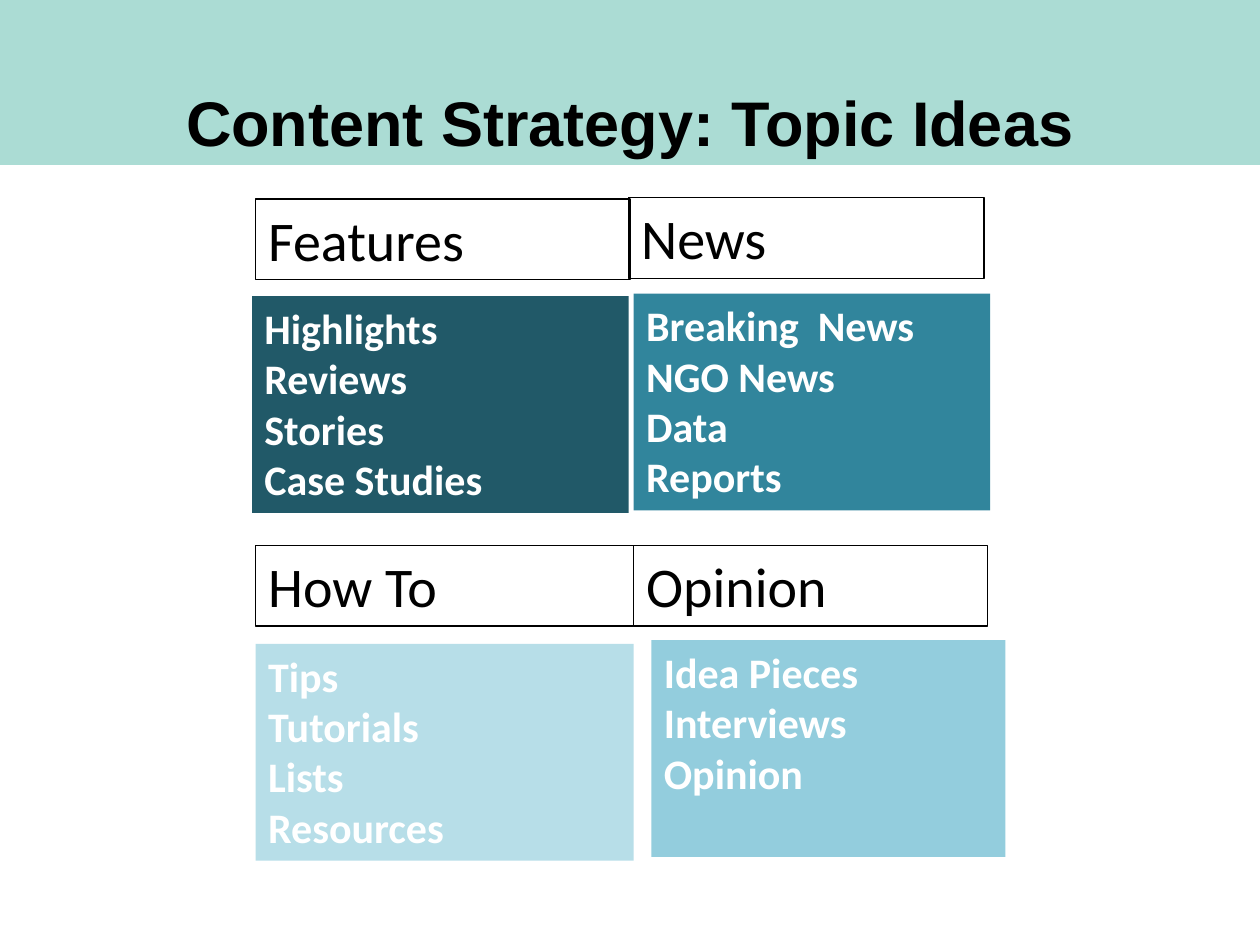
import pptx
import pptx.util
import pptx.dml.color
import pptx.enum.text
import pptx.enum.shapes

Inches = pptx.util.Inches
Pt = pptx.util.Pt

HEADING_HEIGHT = 0.64
LIST_HEIGHT = 1.72

# heading, heading (left, top, width), list (left, top, width), fill, items
TOPICS = [
    ("Features", (2.03, 1.58, 2.97), (2, 2.35, 2.99), "215968",
     ["Highlights\nReviews", "Stories", "Case Studies"]),
    ("News", (4.99, 1.57, 2.82), (5.03, 2.33, 2.83), "31859C",
     ["Breaking  News", "NGO News", "Data", "Reports"]),
    ("How To", (2.03, 4.33, 3), (2.03, 5.11, 3), "B7DEE8",
     ["Tips", "Tutorials", "Lists", "Resources"]),
    ("Opinion", (5.03, 4.33, 2.81), (5.17, 5.08, 2.81), "93CDDD",
     ["Idea Pieces", "Interviews", "Opinion"]),
]


def color(value):
    return pptx.dml.color.RGBColor.from_string(value)


def paint(shape, fill):
    shape.fill.solid()
    shape.fill.fore_color.rgb = color(fill)


def add_span(para, text, size, font, ink, bold):
    span = para.add_run()
    span.text = text
    span.font.size = Pt(size)
    span.font.name = font
    span.font.bold = bold
    span.font.color.rgb = color(ink)


def write_lines(shape, items, size, ink, bold):
    """Write one left-aligned paragraph per item; a newline is a line break."""
    frame = shape.text_frame
    frame.word_wrap = True
    frame.vertical_anchor = pptx.enum.text.MSO_ANCHOR.TOP
    for index, item in enumerate(items):
        para = frame.add_paragraph() if index else frame.paragraphs[0]
        para.alignment = pptx.enum.text.PP_ALIGN.LEFT
        for position, line in enumerate(item.split("\n")):
            if position:
                para.add_line_break()
            add_span(para, line, size, "Calibri", ink, bold)


def add_title(page, text, left, top, width, height):
    """Fill the title placeholder as a band with text at its foot."""
    title = page.shapes.title
    title.left, title.top = Inches(left), Inches(top)
    title.width, title.height = Inches(width), Inches(height)
    paint(title, "ABDCD4")
    frame = title.text_frame
    frame.word_wrap = True
    frame.auto_size = pptx.enum.text.MSO_AUTO_SIZE.NONE
    frame.vertical_anchor = pptx.enum.text.MSO_ANCHOR.BOTTOM
    para = frame.paragraphs[0]
    para.alignment = pptx.enum.text.PP_ALIGN.CENTER
    add_span(para, text, 36, "Arial", "000000", True)


def add_heading(page, text, left, top, width):
    """Outlined heading box."""
    box = page.shapes.add_textbox(Inches(left), Inches(top),
                                  Inches(width), Inches(HEADING_HEIGHT))
    box.line.color.rgb = color("000000")
    box.line.width = Pt(0.75)
    write_lines(box, [text], 32, "000000", False)


def add_topic_list(page, items, fill, left, top, width):
    """Filled box listing the ideas of one topic."""
    box = page.shapes.add_shape(pptx.enum.shapes.MSO_SHAPE.RECTANGLE,
                                Inches(left), Inches(top),
                                Inches(width), Inches(LIST_HEIGHT))
    box.shadow.inherit = False
    paint(box, fill)
    box.line.fill.background()
    write_lines(box, items, 24, "FFFFFF", True)


def main():
    deck = pptx.Presentation()
    deck.slide_width, deck.slide_height = Inches(10), Inches(7.5)
    page = deck.slides.add_slide(deck.slide_layouts[5])

    # Title band
    add_title(page, "Content Strategy: Topic Ideas", 0, 0, 10, 1.31)

    # Four topics, each a heading above its list
    for heading, heading_box, list_box, fill, items in TOPICS:
        add_topic_list(page, items, fill, *list_box)
        add_heading(page, heading, *heading_box)

    deck.save("out.pptx")


if __name__ == "__main__":
    main()
